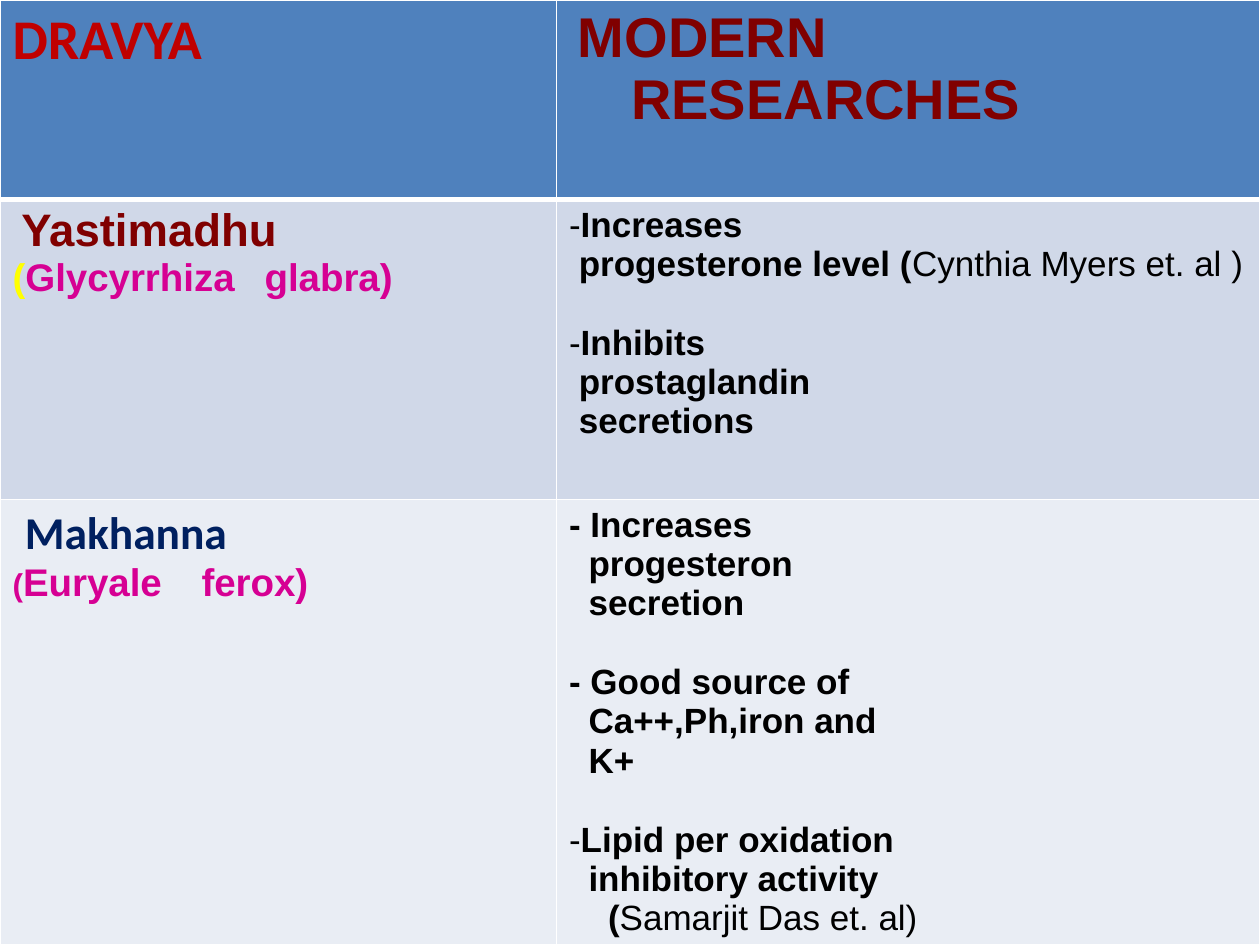
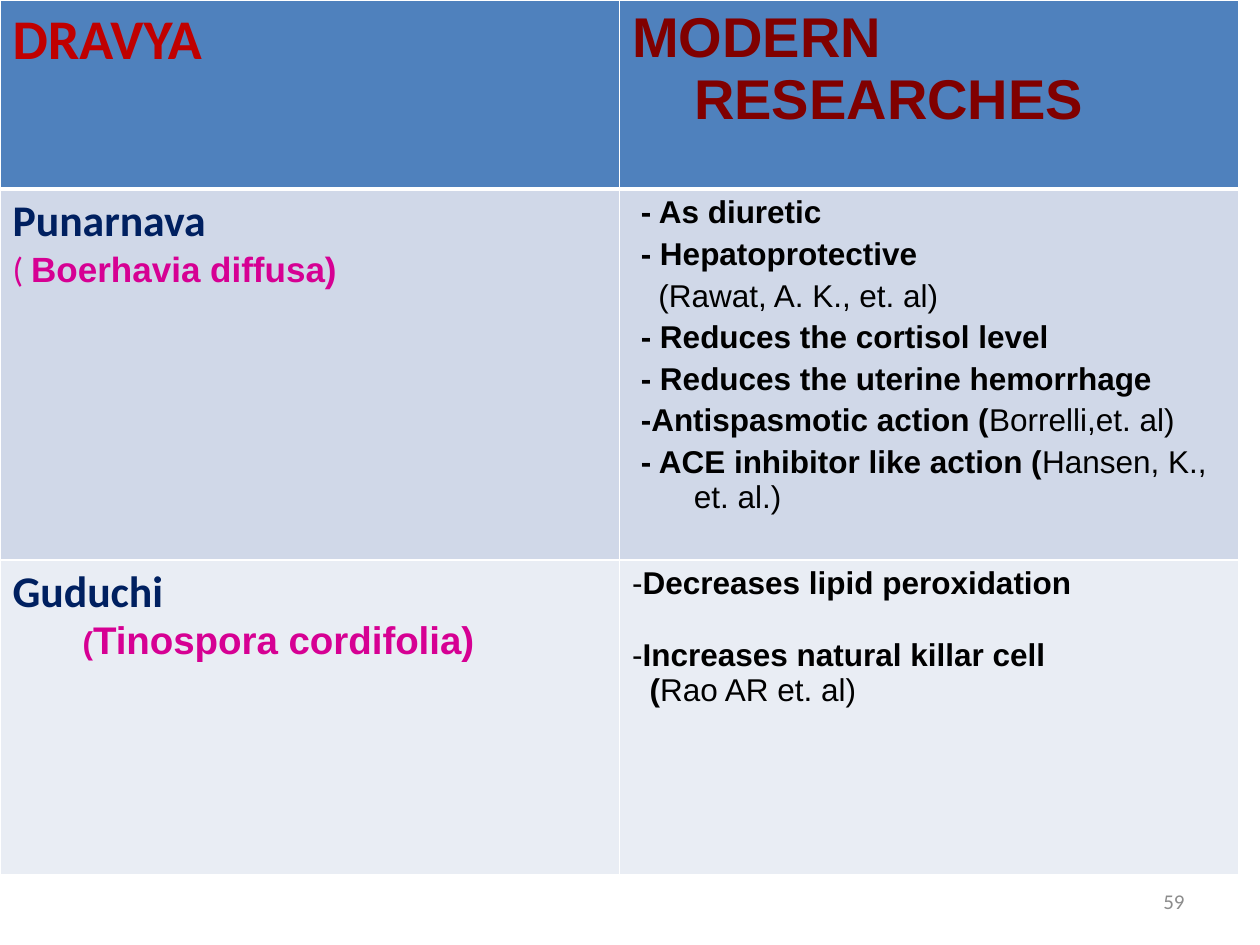
import pptx
import pptx.util
import pptx.dml.color
import pptx.enum.text
import pptx.oxml
import pptx.oxml.ns
from pptx.util import Pt

# Shared colours and styles
WHITE, BLACK, NAVY = "FFFFFF", "000000", "002060"
RED, MAROON, MAGENTA, YELLOW, GREY = "C00000", "800000", "D60093", "FFFF00", "8C8C8C"
ROW_FILLS = ["4F81BD", "D0D8E8", "E9EDF4"]
LINE, HEADER_LINE = 1, 3


# A run is (text, size, colour, bold, font); a paragraph is (runs, layout)
def run(text, size, color=BLACK, bold=True, font="Arial"):
    return text, size, color, bold, font


def para(*runs, left=0, first=0, before=0, bullet=None, tab=None):
    return runs, dict(left=left, first=first, before=before, bullet=bullet, tab=tab)


def finding(size, text, source="", spaces=0, new_group=False, dash=False):
    """One line of research results, with an optional source in regular weight."""
    runs = [run(text, size)] if text else []
    if source:
        runs.append(run(source, size, bold=False))
    hang = size / 3 if dash else 0
    return para(*runs, left=hang or round(spaces * size * 0.278, 2), first=-hang,
                before=size * 1.15 if new_group else 0, bullet="-" if dash else None)


def effect(text, source="", extra=0, before=3.6):
    """One hanging line of the Punarnava list."""
    runs = [run(text, 18)] if text else []
    if source:
        runs.append(run(source, 18, bold=False))
    return para(*runs, left=35.3, first=extra - 30.3, before=before)


def header(modern_left):
    return [[para(run("DRAVYA", 32, RED, font="Calibri"))],
            [para(run("MODERN", 32, MAROON), left=modern_left),
             para(run("RESEARCHES", 32, MAROON), left=35.5)]]


# Content
SLIDES = [
    dict(cols=[318, 402], rows=[114, 171.5, 254.5], number=None, cells=[
        header(5),
        [[para(run("Yastimadhu", 26, MAROON), left=5),
          para(run("(", 22, YELLOW), run("Glycyrrhiza\tglabra)", 22, MAGENTA), tab=145.3)],
         [finding(20, "Increases", dash=True),
          finding(20, "progesterone level (", "Cynthia Myers et. al )", spaces=1),
          finding(20, "Inhibits", dash=True, new_group=True),
          finding(20, "prostaglandin", spaces=1),
          finding(20, "secretions", spaces=1)]],
        [[para(run("Makhanna", 26, NAVY, font="Calibri"), left=7),
          para(run("(", 18, MAGENTA), run("Euryale\tferox)", 22, MAGENTA), tab=98)],
         [finding(20, "- Increases"),
          finding(20, "progesteron", spaces=2),
          finding(20, "secretion", spaces=2),
          finding(20, "- Good source of", new_group=True),
          finding(20, "Ca++,Ph,iron and", spaces=2),
          finding(20, "K+", spaces=2),
          finding(20, "Lipid per oxidation", dash=True, new_group=True),
          finding(20, "inhibitory activity", spaces=2),
          finding(20, "(", "Samarjit Das et. al)", spaces=4)]],
    ]),
    dict(cols=[354, 354], rows=[108, 212, 180], number="59", cells=[
        header(0),
        [[para(run("Punarnava", 25, NAVY, font="Calibri")),
          para(run("( ", 20, MAGENTA, False, "Calibri"),
               run("Boerhavia diffusa)", 20, MAGENTA))],
         [effect("- As diuretic", before=0),
          effect("- Hepatoprotective"),
          effect("", "(Rawat, A. K., et. al)", extra=10),
          effect("- Reduces the cortisol level"),
          effect("- Reduces the uterine hemorrhage"),
          effect("-Antispasmotic action (", "Borrelli,et. al)"),
          effect("- ACE inhibitor like action (", "Hansen, K., et. al.)")]],
        [[para(run("Guduchi", 25, NAVY, font="Calibri")),
          para(run("(", 18, MAGENTA), run("Tinospora cordifolia)", 22, MAGENTA), left=40)],
         [finding(18, "Decreases lipid peroxidation", dash=True),
          finding(18, "Increases natural killar cell", dash=True, new_group=True),
          finding(18, "(", "Rao AR et. al)", spaces=2)]],
    ]),
]


def rgb(color):
    return pptx.dml.color.RGBColor.from_string(color)


def add_xml(parent, xml):
    ns = pptx.oxml.ns.nsdecls("a")
    tag, rest = xml.split(" ", 1)
    parent.append(pptx.oxml.parse_xml(f"{tag} {ns} {rest}"))


def write(tf, paragraphs):
    for i, (runs, layout) in enumerate(paragraphs):
        p = tf.paragraphs[0] if i == 0 else tf.add_paragraph()
        p.space_before = Pt(layout["before"])
        pPr = p._p.get_or_add_pPr()
        pPr.set("marL", str(int(Pt(layout["left"]))))
        pPr.set("indent", str(int(Pt(layout["first"]))))
        if layout["bullet"]:
            add_xml(pPr, '<a:buFont typeface="Arial"/>')
            add_xml(pPr, f'<a:buChar char="{layout["bullet"]}"/>')
        if layout["tab"]:
            pos = int(Pt(layout["tab"]))
            add_xml(pPr, f'<a:tabLst ><a:tab pos="{pos}" algn="l"/></a:tabLst>')
        for text, size, color, bold, font in runs:
            r = p.add_run()
            r.text = text
            r.font.size, r.font.bold, r.font.name = Pt(size), bold, font
            r.font.color.rgb = rgb(color)


def style_cell(cell, row):
    widths = dict(L=LINE, R=LINE, T=HEADER_LINE if row == 1 else LINE,
                  B=HEADER_LINE if row == 0 else LINE)
    tcPr = cell._tc.get_or_add_tcPr()
    for side, width in widths.items():
        add_xml(tcPr, f'<a:ln{side} w="{int(Pt(width))}"><a:solidFill>'
                      f'<a:srgbClr val="{WHITE}"/></a:solidFill></a:ln{side}>')
    cell.fill.solid()
    cell.fill.fore_color.rgb = rgb(ROW_FILLS[row])


def add_research_table(s, cols, rows, cells):
    table = s.shapes.add_table(len(rows), len(cols), Pt(0), Pt(0),
                               Pt(sum(cols)), Pt(sum(rows))).table
    for column, width in zip(table.columns, cols):
        column.width = Pt(width)
    for i, height in enumerate(rows):
        table.rows[i].height = Pt(height)
        for j, paragraphs in enumerate(cells[i]):
            cell = table.cell(i, j)
            style_cell(cell, i)
            write(cell.text_frame, paragraphs)


def add_page_number(s, number):
    tf = s.shapes.add_textbox(Pt(516), Pt(500.5), Pt(168), Pt(28.75)).text_frame
    tf.word_wrap = True
    tf.vertical_anchor = pptx.enum.text.MSO_ANCHOR.MIDDLE
    write(tf, [para(run(number, 12, GREY, False, "Calibri"))])
    tf.paragraphs[0].alignment = pptx.enum.text.PP_ALIGN.RIGHT


def main():
    prs = pptx.Presentation()
    prs.slide_width, prs.slide_height = Pt(720), Pt(540)
    for content in SLIDES:
        s = prs.slides.add_slide(prs.slide_layouts[6])
        add_research_table(s, content["cols"], content["rows"], content["cells"])
        if content["number"]:
            add_page_number(s, content["number"])
    prs.save("out.pptx")


if __name__ == "__main__":
    main()
